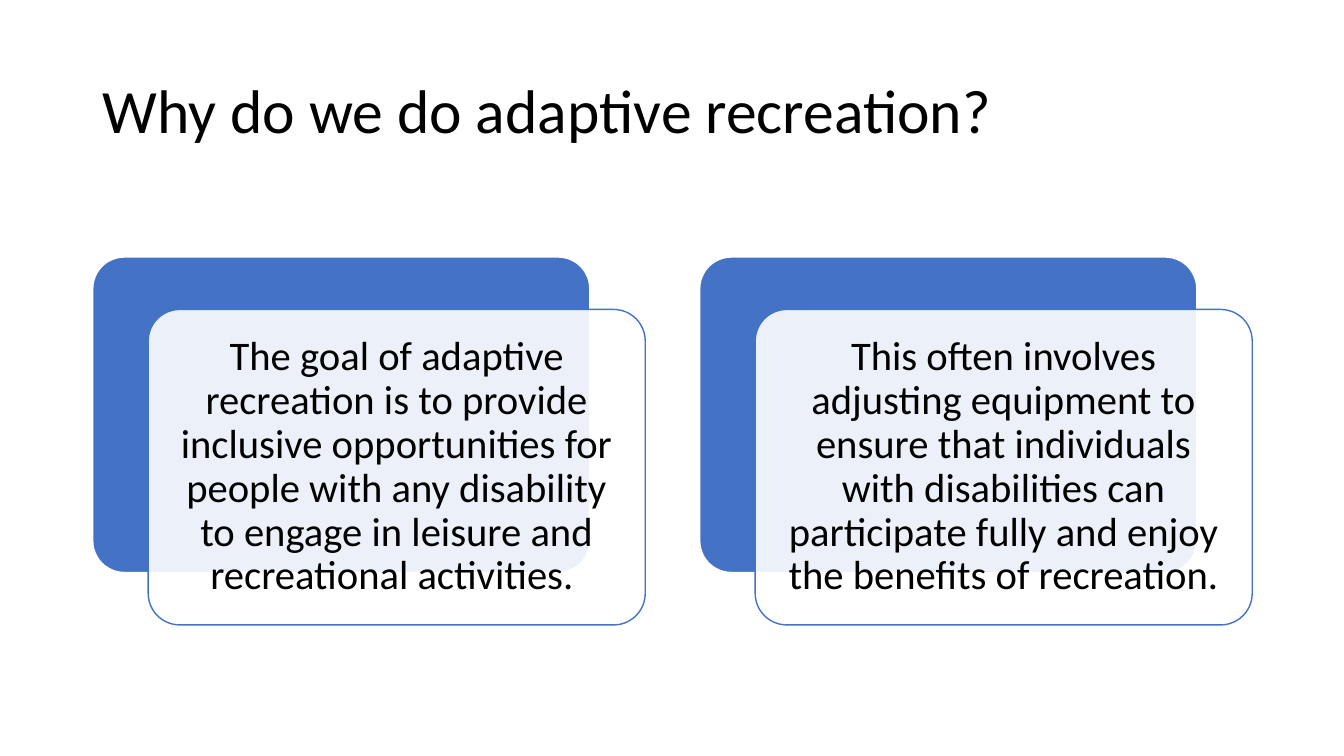
from dataclasses import dataclass

from lxml.etree import SubElement
from pptx import Presentation
from pptx.dml.color import RGBColor
from pptx.enum.shapes import MSO_SHAPE
from pptx.enum.text import MSO_ANCHOR, PP_ALIGN
from pptx.oxml.ns import qn
from pptx.util import Inches, Pt


@dataclass(frozen=True)
class Theme:
    font: str = "Calibri"
    ink: RGBColor = RGBColor(0x00, 0x00, 0x00)
    paper: RGBColor = RGBColor(0xFF, 0xFF, 0xFF)
    accent: RGBColor = RGBColor(0x44, 0x72, 0xC4)
    title_size: int = 44
    body_size: int = 29


class SlideBuilder:
    def __init__(self, slide, theme):
        self.slide = slide
        self.theme = theme

    def set_text(self, frame, text, size, align, inset):
        """Fill a text frame with one paragraph in the theme's font."""
        frame_format = {
            "word_wrap": True,
            "vertical_anchor": MSO_ANCHOR.MIDDLE,
            "margin_left": Inches(inset),
            "margin_right": Inches(inset),
        }
        for name, value in frame_format.items():
            setattr(frame, name, value)
        paragraph = frame.paragraphs[0]
        paragraph.alignment = align
        paragraph.line_spacing = 0.9
        run = paragraph.add_run()
        run.text = text
        run.font.name = self.theme.font
        run.font.size = Pt(size)
        run.font.color.rgb = self.theme.ink

    def title(self, text, left, top, width, height):
        box = self.slide.shapes.add_textbox(
            Inches(left), Inches(top), Inches(width), Inches(height))
        self.set_text(box.text_frame, text, self.theme.title_size, PP_ALIGN.LEFT, 0.1)

    def panel(self, left, top, fill, line, opacity=100):
        """Draw a rounded panel and return it."""
        panel = self.slide.shapes.add_shape(
            MSO_SHAPE.ROUNDED_RECTANGLE, Inches(left), Inches(top),
            Inches(PANEL_WIDTH), Inches(PANEL_HEIGHT))
        panel.adjustments[0] = 0.1
        panel.shadow.inherit = False
        panel.fill.solid()
        panel.fill.fore_color.rgb = fill
        panel.line.color.rgb = line
        panel.line.width = Pt(1)
        if opacity < 100:
            color = panel.element.spPr.find(qn("a:solidFill"))[0]
            SubElement(color, qn("a:alpha"), val=str(opacity * 1000))
        return panel

    def reason(self, text, left, top):
        """Draw a backing panel with an offset, see-through text card."""
        theme = self.theme
        self.panel(left, top, theme.accent, theme.paper)
        card = self.panel(left + CARD_SHIFT_X, top + CARD_SHIFT_Y,
                          theme.paper, theme.accent, opacity=90)
        self.set_text(card.text_frame, text, theme.body_size, PP_ALIGN.CENTER, 0.12)


# Layout in inches
MARGIN = 0.92
PANEL_WIDTH, PANEL_HEIGHT = 4.93, 3.13
CARD_SHIFT_X, CARD_SHIFT_Y = 0.55, 0.52
REASON_TOP, REASON_STEP = 2.55, 6.02

REASONS = [
    "The goal of adaptive recreation is to provide inclusive opportunities for "
    "people with any disability to engage in leisure and recreational activities. ",
    "This often involves adjusting equipment to ensure that individuals with "
    "disabilities can participate fully and enjoy the benefits of recreation.",
]


def main():
    presentation = Presentation()
    presentation.slide_width = Inches(13.33)
    presentation.slide_height = Inches(7.5)
    slide = presentation.slides.add_slide(presentation.slide_layouts[6])
    builder = SlideBuilder(slide, Theme())

    # Heading
    builder.title("Why do we do adaptive recreation?", MARGIN, 0.4, 11.5, 1.45)

    # Reasons, side by side
    for column, text in enumerate(REASONS):
        builder.reason(text, MARGIN + column * REASON_STEP, REASON_TOP)

    presentation.save("out.pptx")


if __name__ == "__main__":
    main()
